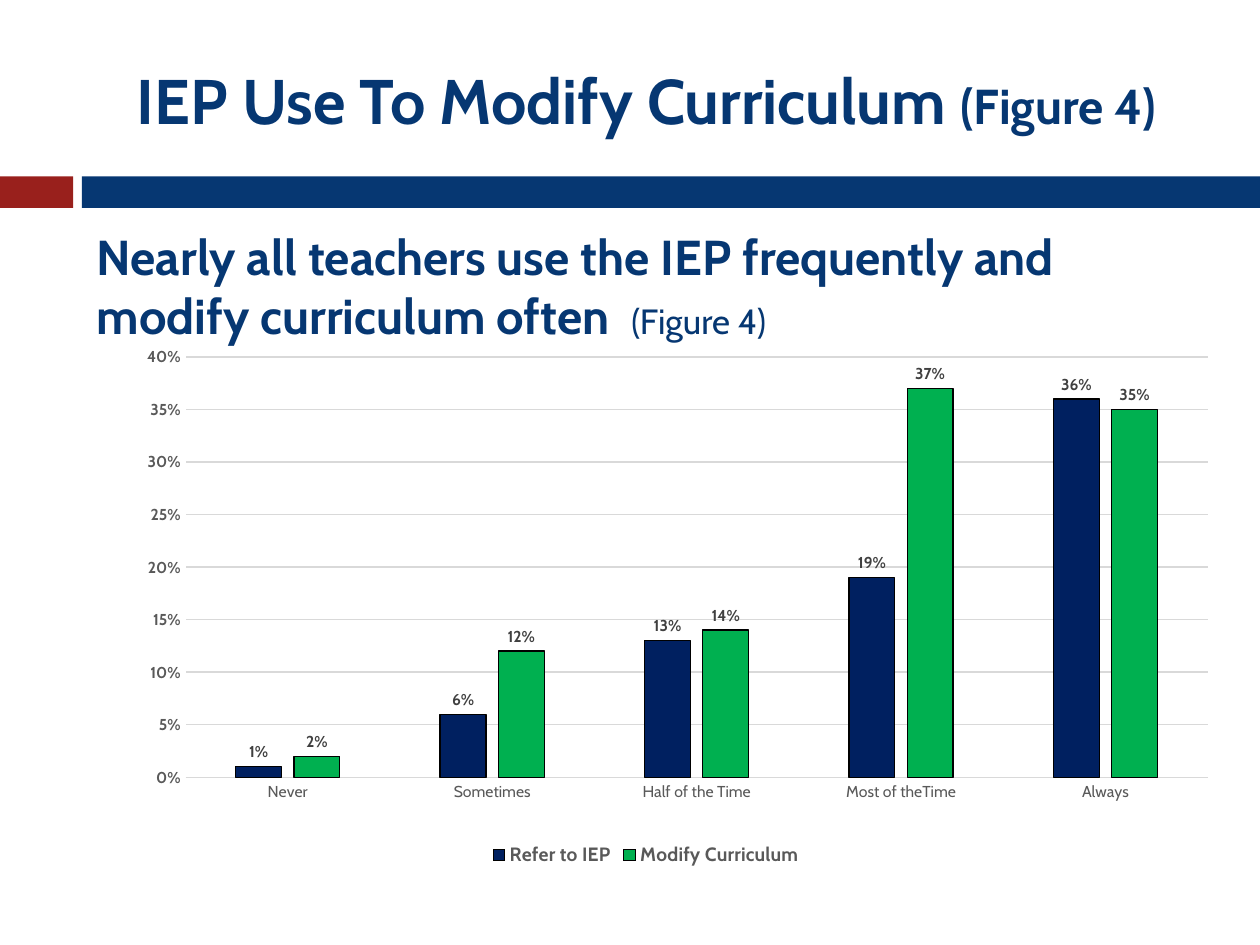
import pptx
import pptx.chart.data
import pptx.dml.color
import pptx.enum.chart
import pptx.enum.shapes
import pptx.enum.text
import pptx.oxml
import pptx.oxml.ns
import pptx.util

Inches, Pt = pptx.util.Inches, pptx.util.Pt
ANCHOR, ALIGN = pptx.enum.text.MSO_ANCHOR, pptx.enum.text.PP_ALIGN

FONT = "Cabin"
NAVY, RED, GRAY, GRID = "063772", "99201C", "595959", "D9D9D9"

# Text runs: wording, size, bold
TITLE = [("IEP Use To Modify Curriculum ", 36, True), ("(Figure 4)", 28, True)]
FINDING = [
    ("Nearly all teachers use the IEP frequently and modify curriculum often  ", 28, True),
    ("(Figure 4)", 20, False),
]
BANDS = [(0, 0.58, RED), (0.65, 9.35, NAVY)]  # left, width, colour
CATEGORIES = ["Never", "Sometimes", "Half of the Time", "Most of theTime", "Always"]
SERIES = [
    ("Refer to IEP", "002060", [0.01, 0.06, 0.13, 0.19, 0.36]),
    ("Modify Curriculum", "00B050", [0.02, 0.12, 0.14, 0.37, 0.35]),
]
PLOT = {"x": 0.09, "y": 0.02, "w": 0.91, "h": 0.8}  # shares of the chart frame
LEFT, WIDTH = 0.67, 8.92


def rgb(color):
    return pptx.dml.color.RGBColor.from_string(color)


def style(font, size, color, bold=False):
    font.name, font.size, font.bold = FONT, Pt(size), bold
    font.color.rgb = rgb(color)


def outline(line, color):
    line.color.rgb = rgb(color)
    line.width = Pt(0.75)


def add_band(slide, left, width, color):
    sp = slide.shapes.add_shape(
        pptx.enum.shapes.MSO_SHAPE.RECTANGLE,
        Inches(left), Inches(1.4), Inches(width), Inches(0.25))
    sp.shadow.inherit = False
    sp.fill.solid()
    sp.fill.fore_color.rgb = rgb(color)
    sp.line.fill.background()


def add_text(slide, top, height, runs, anchor, align):
    sp = slide.shapes.add_textbox(Inches(LEFT), Inches(top), Inches(WIDTH), Inches(height))
    tf = sp.text_frame
    tf.word_wrap = True
    tf.vertical_anchor = anchor
    p = tf.paragraphs[0]
    p.alignment = align
    for text, size, bold in runs:
        r = p.add_run()
        r.text = text
        style(r.font, size, NAVY, bold)


def fix_plot_area(chart):
    """Pin the inner plot area to the PLOT shares of the chart frame."""
    modes = "".join(f'<c:{k}Mode val="edge"/>' for k in "xy")
    places = "".join(f'<c:{k} val="{v}"/>' for k, v in PLOT.items())
    layout = pptx.oxml.parse_xml(
        f'<c:layout {pptx.oxml.ns.nsdecls("c")}><c:manualLayout>'
        f'<c:layoutTarget val="inner"/>{modes}{places}</c:manualLayout></c:layout>')
    area = chart._chartSpace.chart.plotArea
    for old in area.findall(pptx.oxml.ns.qn("c:layout")):
        area.remove(old)
    area.insert(0, layout)


def add_usage_chart(slide):
    data = pptx.chart.data.CategoryChartData(number_format="0%")
    data.categories = CATEGORIES
    for name, _, values in SERIES:
        data.add_series(name, values)
    chart = slide.shapes.add_chart(
        pptx.enum.chart.XL_CHART_TYPE.COLUMN_CLUSTERED,
        Inches(LEFT), Inches(2.75), Inches(WIDTH), Inches(4.17), data).chart
    style(chart.font, 10, "000000")
    chart.has_title = False
    chart.has_legend = True
    chart.legend.position = pptx.enum.chart.XL_LEGEND_POSITION.BOTTOM
    chart.legend.include_in_layout = False
    style(chart.legend.font, 11, GRAY, True)

    cat, val = chart.category_axis, chart.value_axis
    for axis, bold in ((cat, False), (val, True)):
        axis.major_tick_mark = axis.minor_tick_mark = pptx.enum.chart.XL_TICK_MARK.NONE
        style(axis.tick_labels.font, 9, GRAY, bold)
    outline(cat.format.line, GRID)
    val.minimum_scale, val.maximum_scale, val.major_unit = 0, 0.4, 0.05
    val.tick_labels.number_format = "0%"
    val.tick_labels.number_format_is_linked = False
    val.format.line.fill.background()
    outline(val.major_gridlines.format.line, GRID)

    plot = chart.plots[0]
    plot.gap_width, plot.overlap, plot.vary_by_categories = 219, -27, False
    for series, (_, color, _) in zip(plot.series, SERIES):
        series.format.fill.solid()
        series.format.fill.fore_color.rgb = rgb(color)
        outline(series.format.line, "000000")
        labels = series.data_labels
        labels.show_value = True
        labels.number_format = "0%"
        labels.number_format_is_linked = False
        labels.position = pptx.enum.chart.XL_LABEL_POSITION.OUTSIDE_END
        style(labels.font, 9, "404040", True)
    fix_plot_area(chart)


def main():
    prs = pptx.Presentation()
    prs.slide_width, prs.slide_height = Inches(10), Inches(7.5)
    slide = prs.slides.add_slide(prs.slide_layouts[6])
    for band in BANDS:
        add_band(slide, *band)
    add_text(slide, 0.25, 1.08, TITLE, ANCHOR.MIDDLE, ALIGN.CENTER)
    add_text(slide, 1.75, 4.92, FINDING, ANCHOR.TOP, ALIGN.LEFT)
    add_usage_chart(slide)
    prs.save("out.pptx")


if __name__ == "__main__":
    main()
